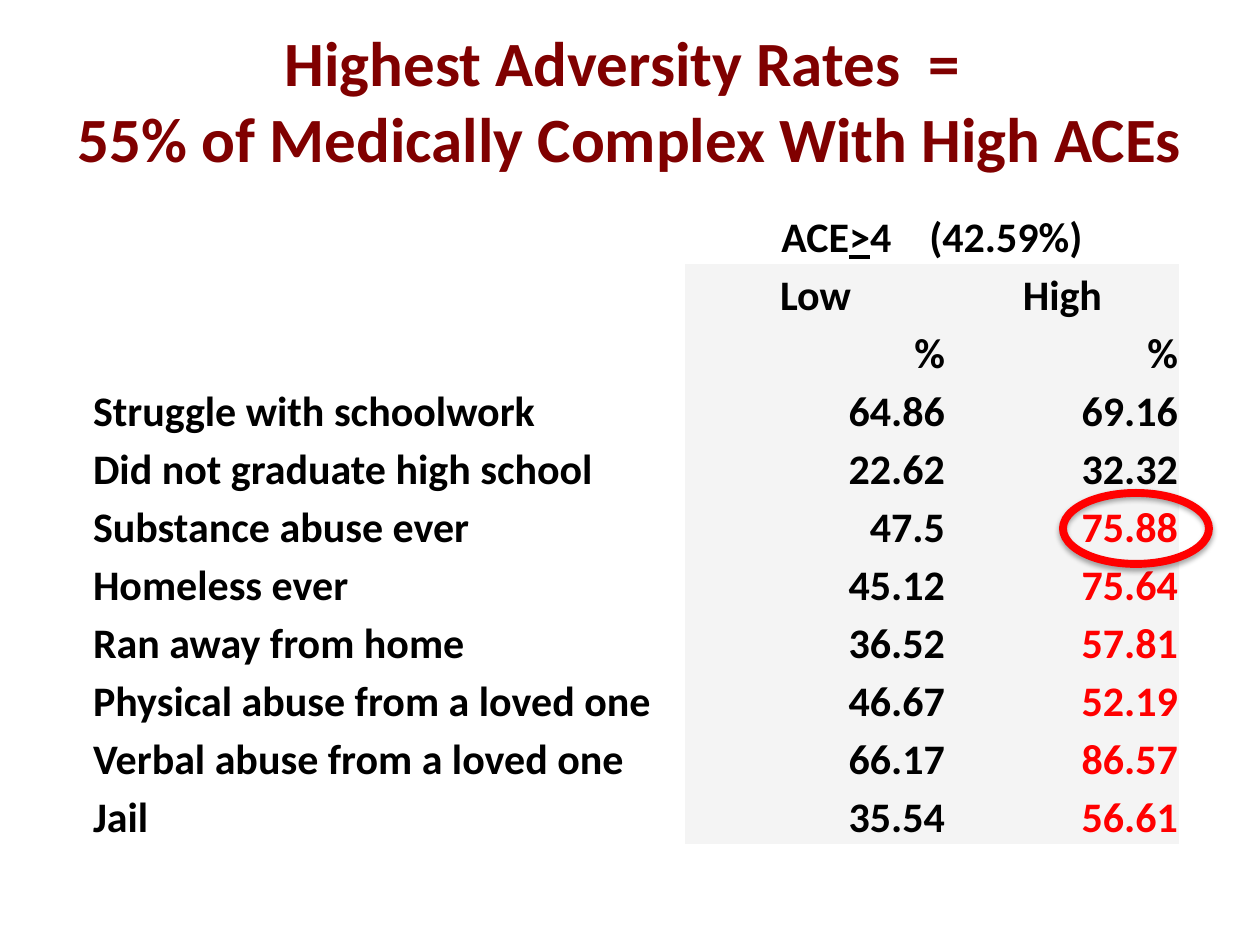
from lxml.etree import SubElement
from pptx import Presentation
from pptx.dml.color import RGBColor
from pptx.enum.shapes import MSO_SHAPE
from pptx.enum.text import MSO_ANCHOR, PP_ALIGN
from pptx.oxml.ns import qn
from pptx.util import Pt

TITLE = "Highest Adversity Rates  = \v55% of Medically Complex With High ACEs"
ACE_HEADING = [("ACE", False), (">", True), ("4    (42.59%)", False)]
LEVELS = ("", "Low", "High")
UNITS = ("", "%", "%")
RATES = [
    ("Struggle with schoolwork", "64.86", "69.16"),
    ("Did not graduate high school", "22.62", "32.32"),
    ("Substance abuse ever", "47.5", "75.88"),
    ("Homeless ever", "45.12", "75.64"),
    ("Ran away from home", "36.52", "57.81"),
    ("Physical abuse from a loved one", "46.67", "52.19"),
    ("Verbal abuse from a loved one", "66.17", "86.57"),
    ("Jail", "35.54", "56.61"),
]
HIGH_RATE = 50
HIGHLIGHTED_FROM = "Substance abuse ever"

COLORS = {"title": "800000", "text": "000000", "alert": "FF0000", "band": "F4F4F4"}
FONT = "Calibri"
PLAIN_TABLE_STYLE = "{2D5ABB26-0587-4C30-8999-92F81FD0307C}"

EMU_PER_PX = 914400 // 126
TITLE_BOX = (63, 20, 1134, 158)
TABLE_LEFT, TABLE_TOP = 92, 149
COLUMN_WIDTHS = (593, 261, 233)
HEADING_HEIGHT, ROW_HEIGHT = 115, 58
RING_BOX = (1063, 493, 146, 71)


def px(*lengths):
    return [round(length * EMU_PER_PX) for length in lengths]


def color(name):
    return RGBColor.from_string(COLORS[name])


def style(paragraph, size, color_name, align):
    paragraph.alignment = align
    font = paragraph.font
    font.name, font.size, font.bold = FONT, Pt(size), True
    font.color.rgb = color(color_name)


def add_title(slide):
    frame = slide.shapes.add_textbox(*px(*TITLE_BOX)).text_frame
    frame.word_wrap = True
    frame.vertical_anchor = MSO_ANCHOR.MIDDLE
    frame.text = TITLE
    style(frame.paragraphs[0], 36, "title", PP_ALIGN.CENTER)


def add_rates(slide):
    rows = [LEVELS, UNITS, *RATES]
    heights = [HEADING_HEIGHT] + [ROW_HEIGHT] * len(rows)
    graphic = slide.shapes.add_table(
        len(heights), len(COLUMN_WIDTHS),
        *px(TABLE_LEFT, TABLE_TOP, sum(COLUMN_WIDTHS), sum(heights)))
    table = graphic.table
    table.first_row = table.horz_banding = False
    table._tbl.tblPr.find(qn("a:tableStyleId")).text = PLAIN_TABLE_STYLE
    for column, width in zip(table.columns, px(*COLUMN_WIDTHS)):
        column.width = width
    for row, height in zip(table.rows, px(*heights)):
        row.height = height

    for cell in table.iter_cells():
        cell.margin_left, cell.margin_right, cell.margin_top = px(1, 1, 1)
        cell.margin_bottom = 0
        cell.vertical_anchor = MSO_ANCHOR.BOTTOM
        cell.fill.background()

    ace_cell = table.cell(0, 1)
    ace_cell.merge(table.cell(0, 2))
    heading = ace_cell.text_frame.paragraphs[0]
    for text, underlined in ACE_HEADING:
        run = heading.add_run()
        run.text = text
        run.font.underline = underlined
    style(heading, 24, "text", PP_ALIGN.CENTER)

    labels = [row[0] for row in rows]
    first_highlight = labels.index(HIGHLIGHTED_FROM)
    for r, row in enumerate(rows):
        for c, text in enumerate(row):
            cell = table.cell(r + 1, c)
            cell.text = text
            if c:
                cell.fill.solid()
                cell.fill.fore_color.rgb = color("band")
            align = PP_ALIGN.LEFT if c == 0 else PP_ALIGN.RIGHT
            if row is LEVELS:
                align = PP_ALIGN.CENTER
            alert = c == 2 and r >= first_highlight and float(text) > HIGH_RATE
            style(cell.text_frame.paragraphs[0], 24, "alert" if alert else "text", align)


def add_ring(slide):
    ring = slide.shapes.add_shape(MSO_SHAPE.OVAL, *px(*RING_BOX))
    ring.fill.background()
    ring.line.color.rgb = color("alert")
    ring.line.width = Pt(4.5)
    ring.shadow.inherit = False
    effects = ring._element.spPr.find(qn("a:effectLst"))
    shadow = SubElement(effects, qn("a:outerShdw"), blurRad=str(Pt(3.1)),
                        dist=str(Pt(1.8)), dir="5400000", rotWithShape="0")
    tint = SubElement(shadow, qn("a:srgbClr"), val=COLORS["text"])
    SubElement(tint, qn("a:alpha"), val="35000")


def main():
    deck = Presentation()
    deck.slide_width, deck.slide_height = px(1260, 945)
    slide = deck.slides.add_slide(deck.slide_layouts[6])
    add_title(slide)
    add_rates(slide)
    add_ring(slide)
    deck.save("out.pptx")


if __name__ == "__main__":
    main()
